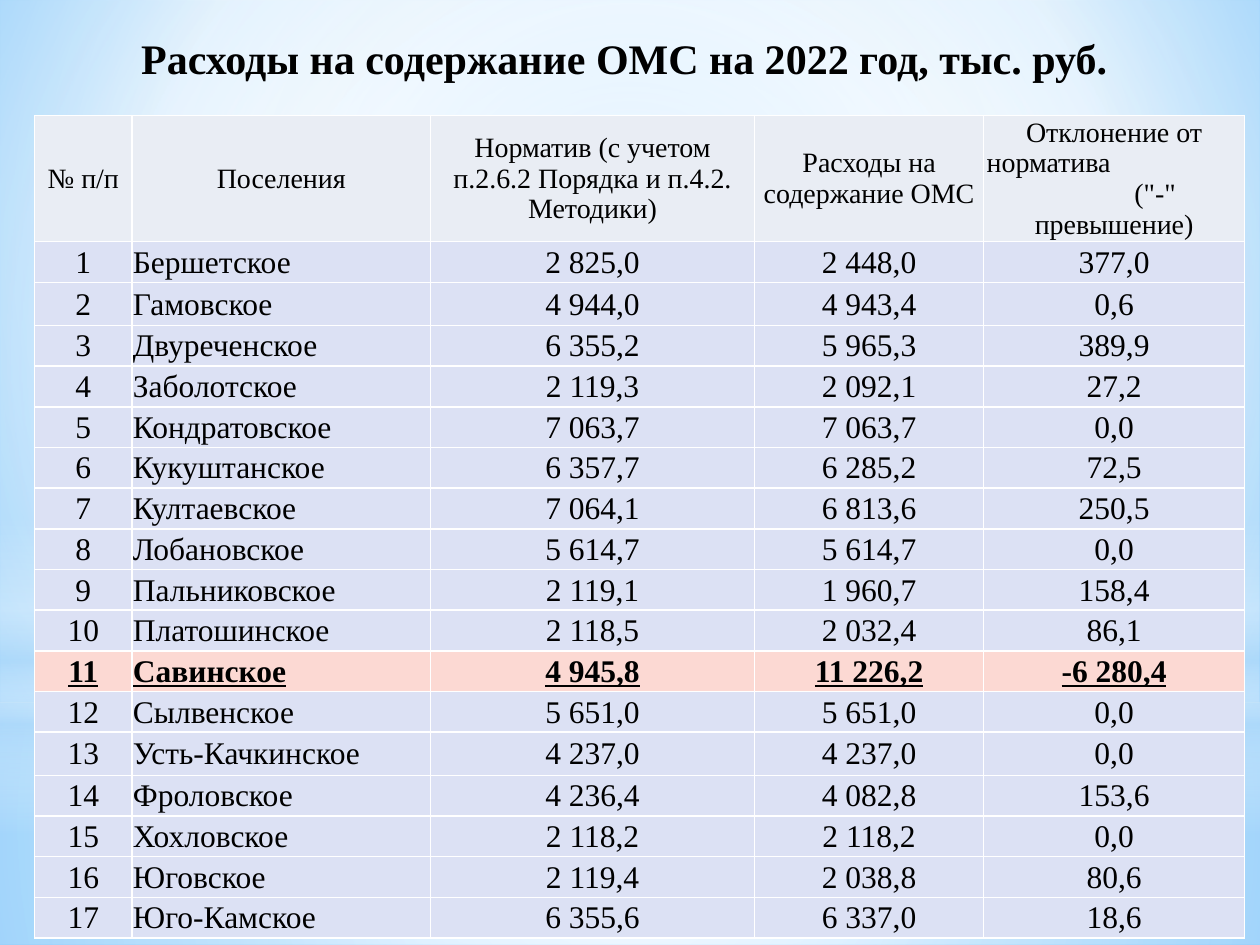
import dataclasses
import typing

import pptx
import pptx.dml.color
import pptx.enum.shapes
import pptx.enum.text
import pptx.oxml
import pptx.oxml.ns
import pptx.util

Cm = pptx.util.Cm
Pt = pptx.util.Pt
RGBColor = pptx.dml.color.RGBColor
MSO_SHAPE = pptx.enum.shapes.MSO_SHAPE
PP_ALIGN = pptx.enum.text.PP_ALIGN
MIDDLE = pptx.enum.text.MSO_ANCHOR.MIDDLE
qn = pptx.oxml.ns.qn

FONT = "Times New Roman"
BLACK = RGBColor(0x00, 0x00, 0x00)
WHITE = RGBColor(0xFF, 0xFF, 0xFF)
SKY = RGBColor(0x9E, 0xD5, 0xFF)
AZURE = RGBColor(0x5B, 0xB9, 0xFF)
PALE_BLUE = RGBColor(0xB4, 0xDC, 0xFA)
HEADER_FILL = RGBColor(0xE9, 0xED, 0xF4)
ROW_FILL = RGBColor(0xDC, 0xE1, 0xF4)
EXCESS_FILL = RGBColor(0xFC, 0xD9, 0xD3)

CIRCLE = '<a:path path="circle"><a:fillToRect l="{}000" t="{}000" r="{}000" b="{}000"/></a:path>'
CENTRED = CIRCLE.format(50, 50, 50, 50)
VERTICAL = '<a:lin ang="5400000" scaled="0"/>'


class Stop(typing.NamedTuple):
    pos: int
    color: RGBColor
    opacity: int = 100


@dataclasses.dataclass
class Glow:
    shape: MSO_SHAPE
    top: float
    height: float
    direction: str
    stops: list[Stop]


class Settlement(typing.NamedTuple):
    name: str
    norm: str
    spending: str
    deviation: str


BACKGROUND = [Stop(0, SKY), Stop(60, WHITE), Stop(100, AZURE)]
GLOWS = [
    Glow(MSO_SHAPE.RECTANGLE, 14.17, 4.88, CENTRED,
         [Stop(0, WHITE, 91), Stop(37, WHITE, 76), Stop(100, PALE_BLUE, 79)]),
    Glow(MSO_SHAPE.RECTANGLE, 0, 14.17, CENTRED,
         [Stop(0, WHITE, 89), Stop(48, WHITE, 62), Stop(100, PALE_BLUE, 79)]),
    Glow(MSO_SHAPE.RECTANGLE, 10.46, 6.35, VERTICAL,
         [Stop(0, WHITE, 0), Stop(29, WHITE, 30), Stop(45, PALE_BLUE, 40),
          Stop(55, WHITE, 26), Stop(65, PALE_BLUE, 60), Stop(100, WHITE, 0)]),
    Glow(MSO_SHAPE.OVAL, 4.45, 14.17, CENTRED, [Stop(0, WHITE), Stop(56, WHITE, 0)]),
]

HEADERS = ["№ п/п", "Поселения", "Норматив (с учетом п.2.6.2 Порядка и п.4.2. Методики)",
           "Расходы на содержание ОМС", 'Отклонение от\nнорматива\n("-"\nпревышение)']
SETTLEMENTS = [
    Settlement("Бершетское", "2 825,0", "2 448,0", "377,0"),
    Settlement("Гамовское", "4 944,0", "4 943,4", "0,6"),
    Settlement("Двуреченское", "6 355,2", "5 965,3", "389,9"),
    Settlement("Заболотское", "2 119,3", "2 092,1", "27,2"),
    Settlement("Кондратовское", "7 063,7", "7 063,7", "0,0"),
    Settlement("Кукуштанское", "6 357,7", "6 285,2", "72,5"),
    Settlement("Култаевское", "7 064,1", "6 813,6", "250,5"),
    Settlement("Лобановское", "5 614,7", "5 614,7", "0,0"),
    Settlement("Пальниковское", "2 119,1", "1 960,7", "158,4"),
    Settlement("Платошинское", "2 118,5", "2 032,4", "86,1"),
    Settlement("Савинское", "4 945,8", "11 226,2", "-6 280,4"),
    Settlement("Сылвенское", "5 651,0", "5 651,0", "0,0"),
    Settlement("Усть-Качкинское", "4 237,0", "4 237,0", "0,0"),
    Settlement("Фроловское", "4 236,4", "4 082,8", "153,6"),
    Settlement("Хохловское", "2 118,2", "2 118,2", "0,0"),
    Settlement("Юговское", "2 119,4", "2 038,8", "80,6"),
    Settlement("Юго-Камское", "6 355,6", "6 337,0", "18,6"),
]
COL_WIDTHS = [1.96, 6.02, 6.53, 4.62, 5.26]
HEADER_HEIGHT, ROW_HEIGHT, TALL_HEIGHT = 2.54, 0.82, 0.87
TALL_ROWS = (2, 13)


def set_gradient(props, stops: list[Stop], direction: str) -> None:
    marks = "".join(
        f'<a:gs pos="{st.pos * 1000}"><a:srgbClr val="{st.color}">'
        f'<a:alpha val="{st.opacity * 1000}"/></a:srgbClr></a:gs>' for st in stops)
    grad = pptx.oxml.parse_xml(
        f'<a:gradFill {pptx.oxml.ns.nsdecls("a")} rotWithShape="1">'
        f'<a:gsLst>{marks}</a:gsLst>{direction}</a:gradFill>')
    props.replace(props.find(qn("a:solidFill")), grad)


def draw_background(s) -> None:
    fill = s.background.fill
    fill.solid()
    fill.fore_color.rgb = WHITE
    set_gradient(s.element.find(f".//{qn('p:bgPr')}"), BACKGROUND, CIRCLE.format(20, 10, 20, 60))


def draw_glow(s, glow: Glow) -> None:
    sp = s.shapes.add_shape(glow.shape, 0, Cm(glow.top), Cm(25.4), Cm(glow.height))
    sp.shadow.inherit = False
    sp.line.fill.background()
    sp.fill.solid()
    set_gradient(sp.element.spPr, glow.stops, glow.direction)


def style_paragraph(p, size: int, bold: bool = False, align: PP_ALIGN = PP_ALIGN.CENTER) -> None:
    p.alignment = align
    p.font.name = FONT
    p.font.size = Pt(size)
    p.font.bold = bold
    p.font.color.rgb = BLACK


def draw_title(s, text: str) -> None:
    tf = s.shapes.add_textbox(Cm(0.71), Cm(0.47), Cm(24), Cm(1.37)).text_frame
    tf.word_wrap = True
    tf.vertical_anchor = MIDDLE
    tf.margin_left = 0
    p = tf.paragraphs[0]
    p.text = text
    style_paragraph(p, 24, bold=True)


def set_borders(cell) -> None:
    props = cell._tc.get_or_add_tcPr()
    for i, side in enumerate(("lnL", "lnR", "lnT", "lnB")):
        props.insert(i, pptx.oxml.parse_xml(
            f'<a:{side} {pptx.oxml.ns.nsdecls("a")} w="12700"><a:solidFill>'
            f'<a:srgbClr val="{WHITE}"/></a:solidFill></a:{side}>'))


def fill_cell(cell, text: str, size: int, color: RGBColor,
              align: PP_ALIGN = PP_ALIGN.CENTER, excess: bool = False) -> None:
    cell.text = text
    cell.vertical_anchor = MIDDLE
    cell.margin_left = cell.margin_right = cell.margin_top = Cm(0.02)
    cell.margin_bottom = 0
    cell.fill.solid()
    cell.fill.fore_color.rgb = color
    set_borders(cell)
    for p in cell.text_frame.paragraphs:
        style_paragraph(p, size, excess, align)
        p.font.underline = excess


def draw_header(table) -> None:
    for cell, text in zip(table.rows[0].cells, HEADERS):
        fill_cell(cell, text, 16, HEADER_FILL)
        cell.margin_left = cell.margin_right = Cm(0.06)
        for p in cell.text_frame.paragraphs:
            p.line_spacing = Pt(17.5)
    _, norm, sign, _ = table.cell(0, 4).text_frame.paragraphs
    norm.alignment = PP_ALIGN.LEFT
    sign._p.get_or_add_pPr().set("marL", str(Cm(1.65)))


def draw_table(s) -> None:
    heights = [HEADER_HEIGHT] + [TALL_HEIGHT if i in TALL_ROWS else ROW_HEIGHT
                                 for i in range(1, len(SETTLEMENTS) + 1)]
    table = s.shapes.add_table(len(heights), len(COL_WIDTHS), Cm(0.7), Cm(2.33),
                               Cm(sum(COL_WIDTHS)), Cm(sum(heights))).table
    table.first_row = table.horz_banding = False
    for col, width in zip(table.columns, COL_WIDTHS):
        col.width = Cm(width)
    for row, height in zip(table.rows, heights):
        row.height = Cm(height)
    draw_header(table)
    for i, item in enumerate(SETTLEMENTS, 1):
        excess = item.deviation.startswith("-")
        color = EXCESS_FILL if excess else ROW_FILL
        for c, text in enumerate((str(i), *item)):
            align = PP_ALIGN.LEFT if c == 1 else PP_ALIGN.CENTER
            fill_cell(table.cell(i, c), text, 18, color, align, excess)


def main() -> None:
    prs = pptx.Presentation()
    prs.slide_width, prs.slide_height = Cm(25.4), Cm(19.05)
    s = prs.slides.add_slide(prs.slide_layouts[6])
    draw_background(s)
    for glow in GLOWS:
        draw_glow(s, glow)
    draw_title(s, "Расходы на содержание ОМС на 2022 год, тыс. руб.")
    draw_table(s)
    prs.save("out.pptx")


if __name__ == "__main__":
    main()
